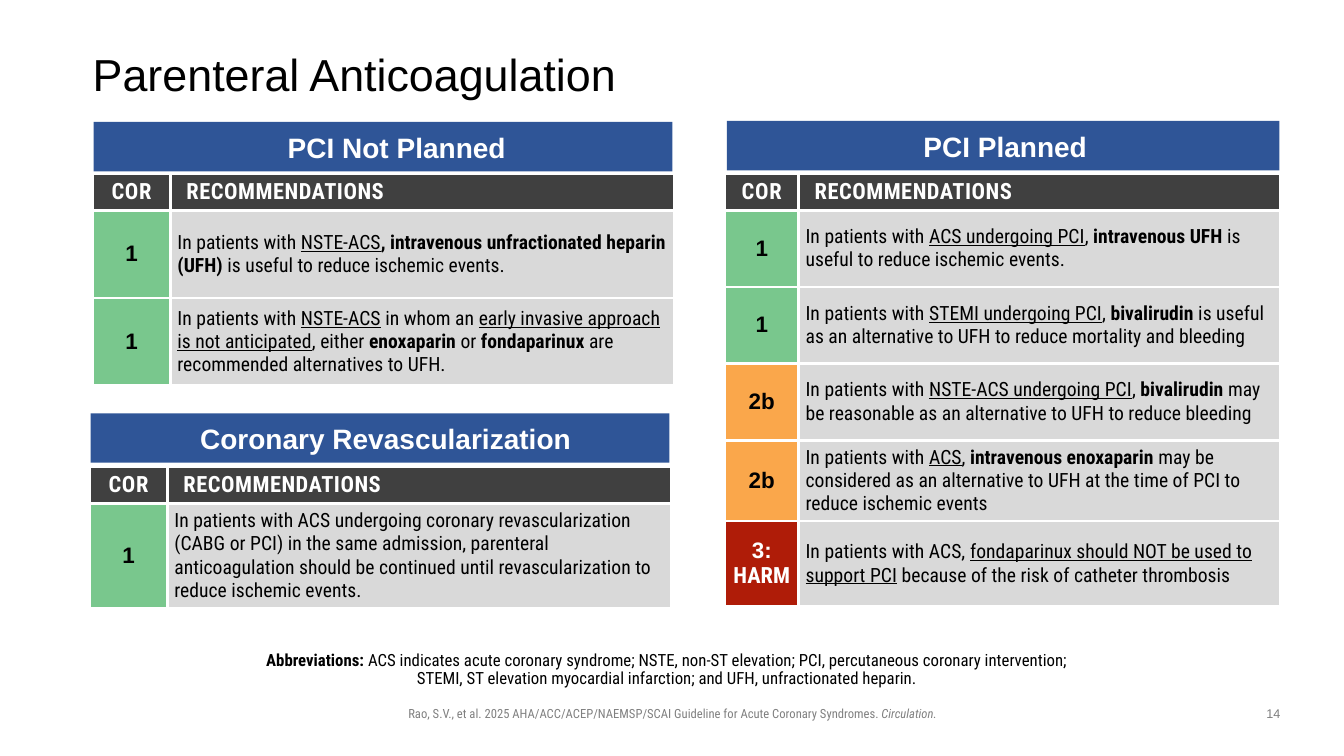
import pptx
import pptx.dml.color
import pptx.enum.shapes
import pptx.enum.text
import pptx.oxml
import pptx.oxml.ns
import pptx.util
from pptx.util import Inches, Pt

SANS, SLIM = "Arial", "Roboto Condensed"
BLUE, DARK, PALE, GRAY = "2F5597", "404040", "D9D9D9", "808080"
BLACK, WHITE = "000000", "FFFFFF"
# class: (fill, text colour)
CLASS = {"1": ("79C78D", BLACK), "2b": ("FAA74B", BLACK), "3:\nHARM": ("AF1C08", WHITE)}

# In the texts, *...* is bold and _..._ is underlined.
PANELS = [
    {"title": "PCI Not Planned", "bar": (0.93, 1.21, 5.74), "label": (1.38, 5.11),
     "table": (0.92, 1.72), "cols": (0.77, 5), "rows": [
        ("1", 0.87, "In patients with _NSTE-ACS_*, intravenous unfractionated heparin (UFH) *"
         "is useful to reduce ischemic events."),
        ("1", 0.87, "In patients with _NSTE-ACS_ in whom an _early invasive approach is not "
         "anticipated_, either *enoxaparin* or *fondaparinux* are recommended alternatives to UFH."),
     ]},
    {"title": "Coronary Revascularization", "bar": (0.9, 4.1, 5.74), "label": (1.78, 4.09),
     "table": (0.89, 4.63), "cols": (0.77, 5), "rows": [
        ("1", 1.02, "In patients with ACS undergoing coronary revascularization (CABG or PCI) in the "
         "same admission, parenteral anticoagulation should be continued until "
         "revascularization to reduce ischemic events."),
     ]},
    {"title": "PCI Planned", "bar": (7.21, 1.2, 5.48), "label": (7.53, 4.88),
     "table": (7.19, 1.72), "cols": (0.73, 4.78), "rows": [
        ("1", 0.76, "In patients with _ACS undergoing PCI_, *intravenous UFH *is useful to reduce "
         "ischemic events."),
        ("1", 0.76, "In patients with _STEMI undergoing PCI_, *bivalirudin* is useful as an "
         "alternative to UFH to reduce mortality and bleeding"),
        ("2b", 0.76, "In patients with _NSTE-ACS undergoing PCI_, *bivalirudin* may be reasonable "
         "as an alternative to UFH to reduce bleeding"),
        ("2b", 0.76, "In patients with _ACS_, *intravenous enoxaparin* may be considered as an "
         "alternative to UFH at the time of PCI to reduce ischemic events"),
        ("3:\nHARM", 0.85, "In patients with ACS, _fondaparinux should NOT be used to support PCI_ "
         "because of the risk of catheter thrombosis"),
     ]},
]
ABBREV = ("*Abbreviations: *ACS indicates acute coronary syndrome; NSTE, non-ST elevation; "
          "PCI, percutaneous coronary intervention;\nSTEMI, ST elevation myocardial infarction; "
          "and UFH, unfractionated heparin.")
CITE = ("Rao, S.V., et al. 2025 AHA/ACC/ACEP/NAEMSP/SCAI Guideline for Acute Coronary Syndromes. ",
        "Circulation.")
HEAD = 0.35

MID = pptx.enum.text.MSO_ANCHOR.MIDDLE
LOW = pptx.enum.text.MSO_ANCHOR.BOTTOM
TOP = pptx.enum.text.MSO_ANCHOR.TOP
LEFT = pptx.enum.text.PP_ALIGN.LEFT
CENTER = pptx.enum.text.PP_ALIGN.CENTER


def color(text):
    return pptx.dml.color.RGBColor.from_string(text)


def paint(item, fill):
    item.fill.solid()
    item.fill.fore_color.rgb = color(fill)


def style(run, size, font, ink, bold=False):
    run.font.size, run.font.name, run.font.bold = Pt(size), font, bold
    run.font.color.rgb = color(ink)


def rich(para, text, size, font, ink):
    """Write text with *bold* and _underlined_ parts and line breaks."""
    for b, chunk in enumerate(text.split("*")):
        for u, part in enumerate(chunk.split("_")):
            for n, line in enumerate(part.split("\n")):
                if n:
                    para.add_line_break()
                if line:
                    run = para.add_run()
                    run.text = line
                    style(run, size, font, ink, b % 2 == 1)
                    if u % 2:
                        run.font.underline = True


def box(slide, place, text, size, font, ink, align=CENTER, anchor=MID, inset=(0, 0, 0, 0), line=0.9):
    frame = slide.shapes.add_textbox(*map(Inches, place)).text_frame
    frame.word_wrap, frame.vertical_anchor = True, anchor
    (frame.margin_left, frame.margin_top,
     frame.margin_right, frame.margin_bottom) = map(Inches, inset)
    para = frame.paragraphs[0]
    para.alignment, para.line_spacing = align, line
    rich(para, text, size, font, ink)
    return para


def edge(cell):
    """Draw white borders on all four sides."""
    props = cell._tc.get_or_add_tcPr()
    for n, side in enumerate(("lnL", "lnR", "lnT", "lnB")):
        props.insert(n, pptx.oxml.parse_xml(
            f'<a:{side} {pptx.oxml.ns.nsdecls("a")} w="28575"><a:solidFill>'
            f'<a:srgbClr val="{WHITE}"/></a:solidFill></a:{side}>'))


def fit(cell, fill, align, indent=0.0, inset=0.05):
    """Prepare a cell and return its paragraph."""
    paint(cell, fill)
    edge(cell)
    cell.vertical_anchor = MID
    cell.margin_top = cell.margin_bottom = Inches(0.05)
    cell.margin_left = cell.margin_right = Inches(inset)
    para = cell.text_frame.paragraphs[0]
    para.alignment = align
    if indent:
        props = para._p.get_or_add_pPr()
        props.set("marL", str(Inches(indent)))
        props.set("indent", "0")
    return para


def panel(slide, data):
    x, y, wide = data["bar"]
    bar = slide.shapes.add_shape(pptx.enum.shapes.MSO_SHAPE.RECTANGLE,
                                 *map(Inches, (x, y, wide, 0.49)))
    bar.shadow.inherit = False
    paint(bar, BLUE)
    bar.line.fill.background()
    left, span = data["label"]
    box(slide, (left, y + 0.11, span, 0.32), f'*{data["title"]}*', 20, SANS, WHITE)

    rows, cols = data["rows"], data["cols"]
    tall = [HEAD] + [high for _, high, _ in rows]
    place = (*data["table"], sum(cols), sum(tall))
    grid = slide.shapes.add_table(len(tall), 2, *map(Inches, place)).table
    grid.first_row = grid.horz_banding = False
    for col, size in zip(grid.columns, cols):
        col.width = Inches(size)
    for row, size in zip(grid.rows, tall):
        row.height = Inches(size)

    for n, (text, gap, align, indent) in enumerate((("COR", "50", CENTER, 0),
                                                    ("RECOMMENDATIONS", "40", LEFT, 0.06))):
        para = fit(grid.cell(0, n), DARK, align, indent, 0.1)
        para.text = text
        style(para.runs[0], 16, SLIM, WHITE, True)
        para.runs[0]._r.get_or_add_rPr().set("spc", gap)
    for n, (grade, _, text) in enumerate(rows, 1):
        fill, ink = CLASS[grade]
        para = fit(grid.cell(n, 0), fill, CENTER)
        rich(para, f"*{grade}*", 16, SANS, ink)
        for run in para.runs[1:]:
            run.font.name = SLIM
        para = fit(grid.cell(n, 1), PALE, LEFT, 0.02)
        rich(para, text, 14, SLIM, BLACK)


def main():
    deck = pptx.Presentation()
    deck.slide_width, deck.slide_height = Inches(13.33), Inches(7.5)
    slide = deck.slides.add_slide(deck.slide_layouts[6])
    pad = (0.1, 0.05, 0.1, 0.05)
    cite = box(slide, (2.36, 6.95, 8.62, 0.25), "*".join(CITE), 9, SLIM, GRAY,
               anchor=TOP, inset=pad, line=1.0)
    cite.runs[1].font.bold, cite.runs[1].font.italic = False, True
    box(slide, (0.92, 0.4, 11.5, 0.72), "Parenteral Anticoagulation", 32, SANS, BLACK, LEFT)
    for data in PANELS:
        panel(slide, data)
    box(slide, (1.88, 6.42, 9.57, 0.46), ABBREV, 12, SLIM, BLACK,
        anchor=LOW, inset=(0, 0.05, 0.1, 0.05))
    box(slide, (12.42, 6.95, 0.42, 0.26), "14", 9, SANS, GRAY, anchor=TOP, inset=pad, line=1.0)
    deck.save("out.pptx")


if __name__ == "__main__":
    main()
